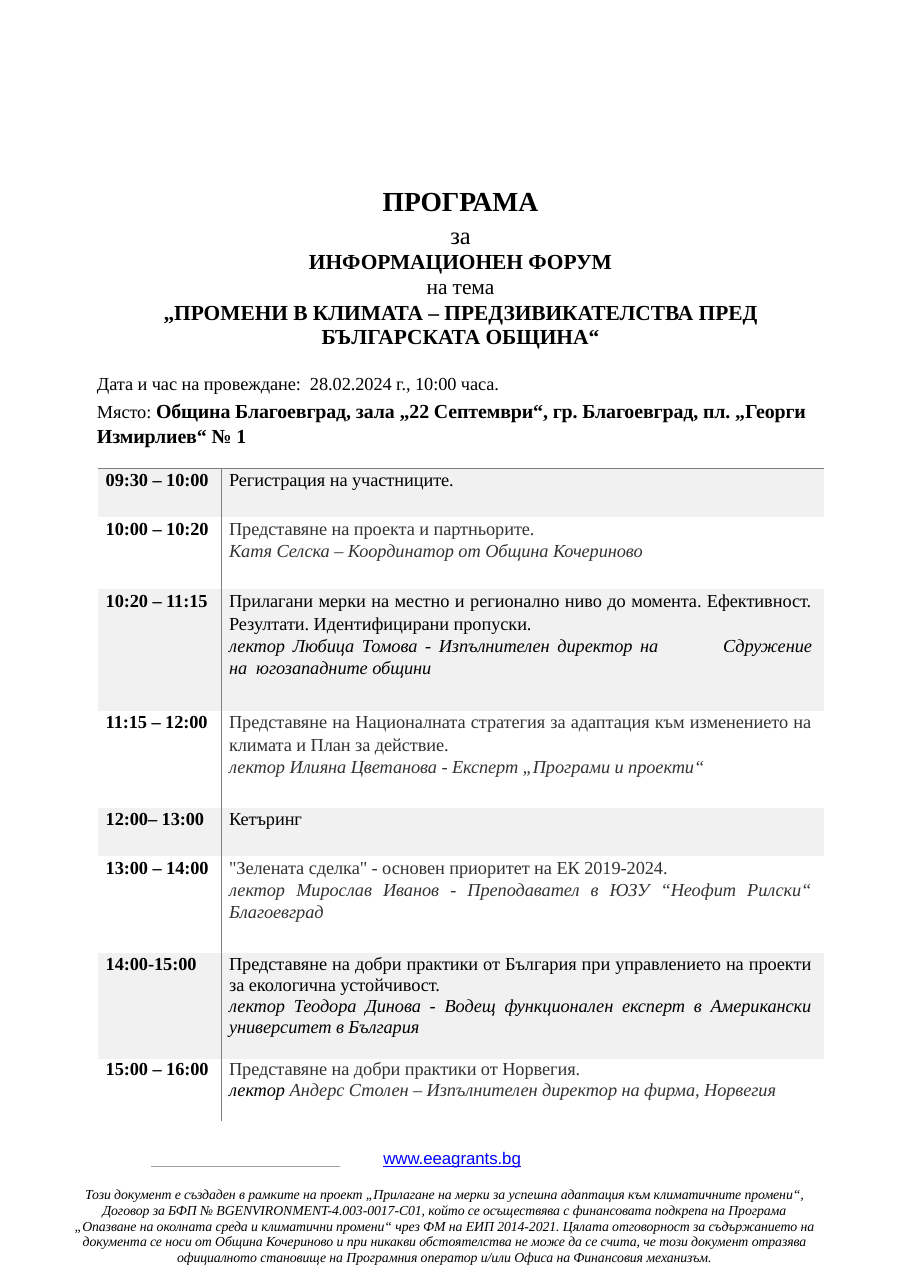
from lxml import etree
from pptx import Presentation
from pptx.dml.color import RGBColor
from pptx.enum.shapes import MSO_CONNECTOR
from pptx.enum.text import MSO_ANCHOR, MSO_AUTO_SIZE, PP_ALIGN
from pptx.oxml.ns import qn
from pptx.util import Inches, Pt

CENTER, LEFT, JUSTIFY = PP_ALIGN.CENTER, PP_ALIGN.LEFT, PP_ALIGN.JUSTIFY
TOP, NO_FIT, STRAIGHT = MSO_ANCHOR.TOP, MSO_AUTO_SIZE.NONE, MSO_CONNECTOR.STRAIGHT

BLACK = RGBColor(0, 0, 0)
DARK = RGBColor(0x33, 0x33, 0x33)
LINK = RGBColor(0, 0, 0xFF)
BAND = RGBColor(0xF1, 0xF1, 0xF1)
RULE = RGBColor(0x9F, 0x9F, 0x9F)
GRID = "7E7E7E"
SERIF, SANS = "Times New Roman", "Arial"
NO_STYLE = "{2D5ABB26-0587-4C30-8999-92F81FD0307C}"

HEADING = [  # text, size, bold, line pitch, space before
    ("ПРОГРАМА", 18, True, None, 0),
    ("за", 16, False, 18.9, 2.2),
    ("ИНФОРМАЦИОНЕН ФОРУМ", 14, True, 16.2, 0),
    ("на тема", 14, False, 16.1, 0),
    ("„ПРОМЕНИ В КЛИМАТА – ПРЕДЗИВИКАТЕЛСТВА ПРЕД\vБЪЛГАРСКАТА ОБЩИНА“",
     14, True, 16.1, 0.8),
]
AGENDA = [  # time, topic, speaker, row height
    ("09:30 – 10:00", "Регистрация на участниците.", "", 0.44),
    ("10:00 – 10:20", "Представяне на проекта и партньорите.",
     "Катя Селска – Координатор от Община Кочериново", 0.66),
    ("10:20 – 11:15", "Прилагани мерки на местно и регионално ниво до момента. "
     "Ефективност. Резултати. Идентифицирани пропуски.",
     "лектор Любица Томова - Изпълнителен директор на\tСдружение на  "
     "югозападните общини", 1.1),
    ("11:15 – 12:00", "Представяне на Националната стратегия за адаптация към "
     "изменението на климата и План за действие.",
     "лектор Илияна Цветанова - Експерт „Програми и проекти“", 0.88),
    ("12:00– 13:00", "Кетъринг", "", 0.44),
    ("13:00 – 14:00", "\"Зелената сделка\" - основен приоритет на ЕК 2019-2024.",
     "лектор Мирослав Иванов - Преподавател в ЮЗУ “Неофит Рилски“ Благоевград", 0.88),
    ("14:00-15:00", "Представяне на добри практики от България при управлението "
     "на проекти за екологична устойчивост.",
     "лектор Теодора Динова - Водещ функционален експерт в Американски "
     "университет в България", 0.96),
    ("15:00 – 16:00", "Представяне на добри практики от Норвегия.",
     "лектор Андерс Столен – Изпълнителен директор на фирма, Норвегия", 0.57),
]
DISCLAIMER = (
    "Този документ е създаден в рамките на проект „Прилагане на мерки за успешна "
    "адаптация към климатичните промени“,\v"
    "Договор за БФП № BGENVIRONMENT-4.003-0017-С01, който се осъществява с "
    "финансовата подкрепа на Програма",
    "„Опазване на околната среда и климатични промени“ чрез ФМ на ЕИП 2014-2021. "
    "Цялата отговорност за съдържанието на\v"
    "документа се носи от Община Кочериново и при никакви обстоятелства не може "
    "да се счита, че този документ отразява",
    "официалното становище на Програмния оператор и/или Офиса на Финансовия механизъм.",
)


def add_text(p, text, size=12, color=BLACK, font=SERIF, bold=False, italic=False,
             underline=False):
    for i, part in enumerate(text.split("\v")):
        if i:
            p.add_line_break()
        r = p.add_run()
        r.text = part
        f = r.font
        f.name, f.size, f.bold, f.italic, f.underline = font, Pt(size), bold, italic, underline
        f.color.rgb = color
        r._r.get_or_add_rPr().set("spc", "-5")


def paragraph(tf, first, align=LEFT, pitch=None, before=0):
    p = tf.paragraphs[0] if first else tf.add_paragraph()
    p.alignment = align
    p.space_before, p.space_after = Pt(before), Pt(0)
    p.line_spacing = Pt(pitch) if pitch else 1.0
    return p


def place(s, box):
    """Move a text shape into the box and return its bare text frame."""
    s.left, s.top, s.width, s.height = [Inches(v) for v in box]
    tf = s.text_frame
    tf.word_wrap, tf.auto_size, tf.vertical_anchor = True, NO_FIT, TOP
    tf.margin_left = tf.margin_right = tf.margin_top = tf.margin_bottom = 0
    return tf


def add_heading(slide, box):
    tf = place(slide.shapes.title, box)
    for i, (text, size, bold, pitch, before) in enumerate(HEADING):
        p = paragraph(tf, i == 0, CENTER, pitch, before)
        add_text(p, text, size, bold=bold)


def add_venue(slide, box):
    tf = place(slide.placeholders[1], box)
    when = paragraph(tf, True)
    add_text(when, "Дата и час на провеждане:  28.02.2024 г., 10:00 часа.")
    where = paragraph(tf, False, pitch=16.3, before=1.8)
    add_text(where, "Място: ")
    add_text(where, "Община Благоевград, зала „22 Септември“, гр. Благоевград, "
             "пл. „Георги\vИзмирлиев“ № 1", 13, bold=True)
    for p in (when, where):
        pPr = p._p.get_or_add_pPr()
        pPr.set("marL", "0")
        pPr.set("indent", "0")
        etree.SubElement(pPr, qn("a:buNone"))


def add_border(cell, side):
    tcPr = cell._tc.get_or_add_tcPr()
    ln = etree.Element(qn("a:" + side), w=str(Pt(0.5)))
    fill = etree.SubElement(ln, qn("a:solidFill"))
    etree.SubElement(fill, qn("a:srgbClr"), val=GRID)
    # Borders stand before the cell fill, in the order left, right, top
    tcPr.insert(len(tcPr) - 1, ln)


def add_agenda(slide, box):
    left, top, width, time_width = box
    height = sum(row[3] for row in AGENDA)
    table = slide.shapes.add_table(len(AGENDA), 2, Inches(left), Inches(top),
                                   Inches(width), Inches(height)).table
    table._tbl.tblPr.find(qn("a:tableStyleId")).text = NO_STYLE
    table.first_row = table.horz_banding = False
    table.columns[0].width = Inches(time_width)
    table.columns[1].width = Inches(width - time_width)

    for i, (time, topic, speaker, row_height) in enumerate(AGENDA):
        table.rows[i].height = Inches(row_height)
        banded = i % 2 == 0
        color = BLACK if banded else DARK
        pitch = 13.8 if i >= 6 else 14.6
        time_cell, topic_cell = table.cell(i, 0), table.cell(i, 1)
        for cell, side in ((time_cell, "lnR"), (topic_cell, "lnL")):
            cell.margin_left, cell.margin_right = Inches(0.07), Inches(0.11)
            cell.margin_top = cell.margin_bottom = 0
            if banded:
                cell.fill.solid()
                cell.fill.fore_color.rgb = BAND
            else:
                cell.fill.background()
            add_border(cell, side)
            if i == 0:
                add_border(cell, "lnT")
        time_cell.margin_right = 0
        add_text(paragraph(time_cell.text_frame, True, pitch=pitch), time, bold=True)
        tf = topic_cell.text_frame
        add_text(paragraph(tf, True, JUSTIFY, pitch), topic, color=color)
        if not speaker:
            continue
        p = paragraph(tf, False, JUSTIFY, pitch)
        if "\t" in speaker:
            tabs = etree.SubElement(p._p.get_or_add_pPr(), qn("a:tabLst"))
            etree.SubElement(tabs, qn("a:tab"), pos=str(Inches(4.31)), algn="l")
        if i == len(AGENDA) - 1:
            role, speaker = speaker.split(" ", 1)
            add_text(p, role + " ", italic=True)
        add_text(p, speaker, color=color, italic=True)


def add_footer(slide, box):
    left, top, width, height = box
    # Short rule and web address
    line = slide.shapes.add_connector(STRAIGHT, Inches(left + 0.8), Inches(top + 0.17),
                                      Inches(left + 2.52), Inches(top + 0.17))
    line.line.color.rgb, line.line.width = RULE, Pt(0.6)
    etree.SubElement(line._element.spPr, qn("a:effectLst"))
    tf = place(slide.shapes.add_textbox(0, 0, 0, 0), (left + 2.91, top, 1.4, 0.2))
    add_text(paragraph(tf, True), "www.eeagrants.bg", 11, LINK, SANS, underline=True)
    # Disclaimer
    tf = place(slide.shapes.add_textbox(0, 0, 0, 0), (left, top + 0.35, width, height - 0.35))
    for i, text in enumerate(DISCLAIMER):
        add_text(paragraph(tf, i == 0, CENTER, 10.3), text, 9, italic=True)


def main():
    prs = Presentation()
    prs.slide_width, prs.slide_height = Inches(8.26), Inches(11.69)
    slide = prs.slides.add_slide(prs.slide_layouts[1])
    add_heading(slide, (0.93, 1.67, 6.5, 1.55))
    add_venue(slide, (0.88, 3.38, 6.6, 0.7))
    add_agenda(slide, (0.89, 4.25, 6.59, 1.12))
    add_footer(slide, (0.57, 10.42, 6.92, 1.1))
    prs.save("out.pptx")


if __name__ == "__main__":
    main()
